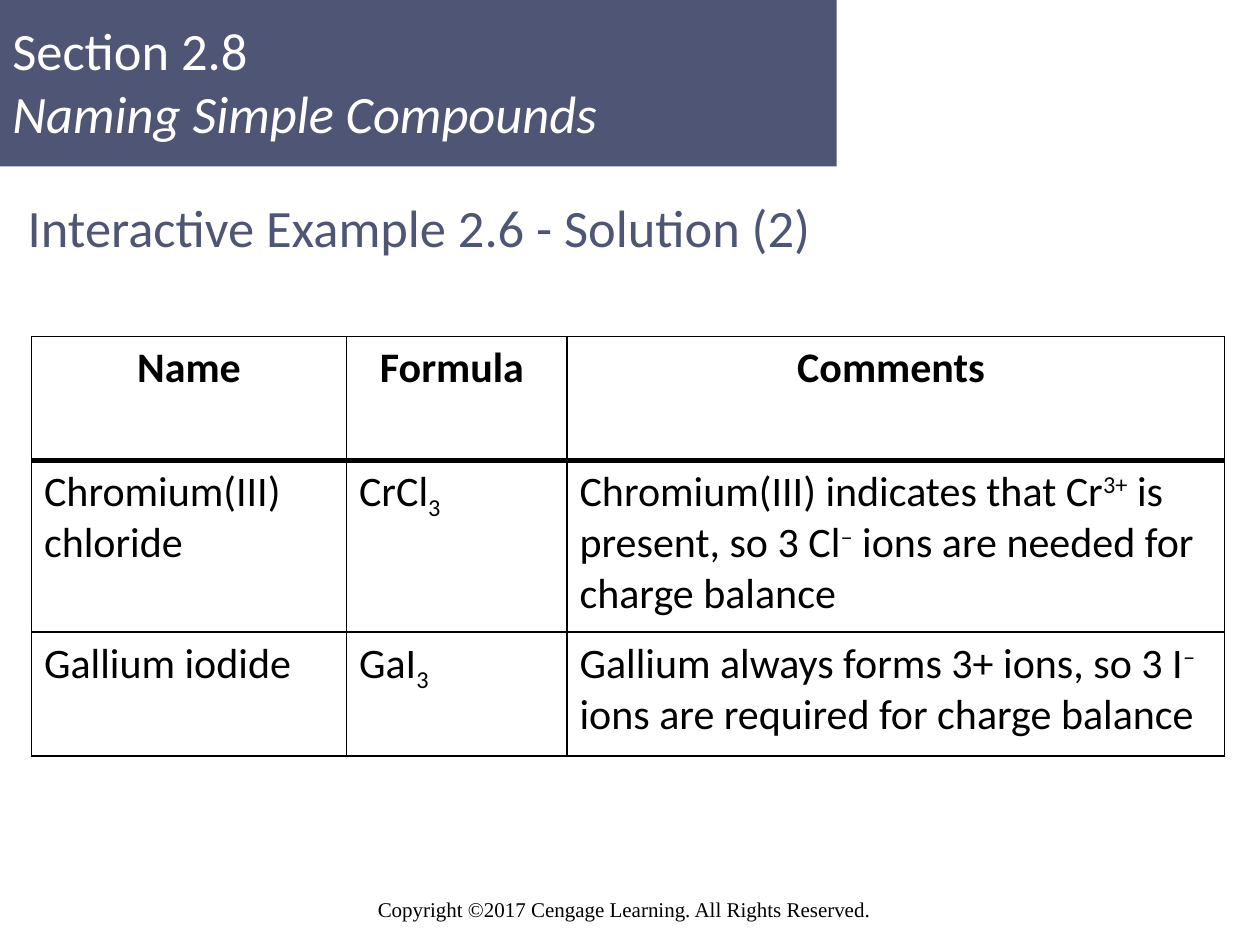
from lxml import etree
from pptx import Presentation
from pptx import util as u
from pptx.dml.color import RGBColor
from pptx.enum import shapes, text
from pptx.oxml.ns import qn

COLORS = {"slate": "4E5575", "white": "FFFFFF", "black": "000000"}
BASELINES = {"normal": None, "sub": "-25000", "super": "30000"}


def share(left, top, width, height):
    return [int(deck.slide_width * left / 100), int(deck.slide_height * top / 100),
            int(deck.slide_width * width / 100), int(deck.slide_height * height / 100)]


def write(paragraph, wording, size=24, color="black", font="Calibri", bold=False,
          italic=False, align=text.PP_ALIGN.LEFT, level="normal"):
    paragraph.alignment = align
    run = paragraph.add_run()
    run.text = wording
    run.font.size = u.Pt(size)
    run.font.name = font
    run.font.bold = bold
    run.font.italic = italic
    run.font.color.rgb = RGBColor.from_string(COLORS[color])
    if BASELINES[level]:
        run._r.get_or_add_rPr().set("baseline", BASELINES[level])


deck = Presentation()
deck.slide_width, deck.slide_height = u.Inches(10), u.Inches(7.5)
slide = deck.slides.add_slide(deck.slide_layouts[5])

banner = slide.shapes.add_shape(shapes.MSO_SHAPE.RECTANGLE, *share(0, 0, 66.4, 17.6))
banner.shadow.inherit = False
banner.fill.solid()
banner.fill.fore_color.rgb = RGBColor.from_string(COLORS["slate"])
banner.line.fill.background()

section = slide.shapes.add_textbox(*share(0, 0, 80.1, 17.07)).text_frame
section.word_wrap = True
section.vertical_anchor = text.MSO_ANCHOR.MIDDLE
write(section.paragraphs[0], "Section 2.8", size=30, color="white")
write(section.add_paragraph(), "Naming Simple Compounds", size=30, color="white", italic=True)

rights = slide.shapes.add_textbox(*share(29, 94.27, 41.7, 4)).text_frame
rights.word_wrap = True
write(rights.paragraphs[0], "Copyright ©2017 Cengage Learning. All Rights Reserved.",
      size=12, font="Times New Roman")

heading = slide.shapes.title
heading.left, heading.top, heading.width, heading.height = share(1.2, 18.93, 96.8, 10.13)
heading.text_frame.auto_size = text.MSO_AUTO_SIZE.NONE
heading.text_frame.vertical_anchor = text.MSO_ANCHOR.MIDDLE
write(heading.text_frame.paragraphs[0], "Interactive Example 2.6 - Solution (2)",
      size=30, color="slate")

compounds = [
    [[("Name", "normal")], [("Formula ", "normal")], [("Comments ", "normal")]],
    [[("Chromium(III) chloride", "normal")],
     [("CrCl", "normal"), ("3", "sub")],
     [("Chromium(III) indicates that Cr", "normal"), ("3+", "super"),
      (" is present, so 3 Cl", "normal"), ("–", "super"),
      (" ions are needed for charge balance", "normal")]],
    [[("Gallium iodide", "normal")],
     [("GaI", "normal"), ("3", "sub")],
     [("Gallium always forms 3+ ions, so 3 I", "normal"), ("–", "super"),
      (" ions are required for charge balance", "normal")]],
]
column_shares = [25, 17.5, 52.2]
row_shares = [13.1, 18.2, 13.1]

table = slide.shapes.add_table(
    len(row_shares), len(column_shares),
    *share(2.5, 35.6, sum(column_shares), sum(row_shares))).table
table.first_row = table.horz_banding = False
for column, width in zip(table.columns, column_shares):
    column.width = int(deck.slide_width * width / 100)
for row, height in zip(table.rows, row_shares):
    row.height = int(deck.slide_height * height / 100)

for r, entries in enumerate(compounds):
    for c, pieces in enumerate(entries):
        cell = table.cell(r, c)
        for side in "LRTB":
            under_header = (r, side) in [(0, "B"), (1, "T")]
            border = etree.SubElement(cell._tc.get_or_add_tcPr(), qn(f"a:ln{side}"),
                                      w=str(u.Pt(3 if under_header else 1)))
            ink = etree.SubElement(border, qn("a:solidFill"))
            etree.SubElement(ink, qn("a:srgbClr"), val=COLORS["black"])
        cell.fill.solid()
        cell.fill.fore_color.rgb = RGBColor.from_string(COLORS["white"])
        for wording, level in pieces:
            write(cell.text_frame.paragraphs[0], wording, bold=r == 0, level=level,
                  align=text.PP_ALIGN.LEFT if r else text.PP_ALIGN.CENTER)

deck.save("out.pptx")
